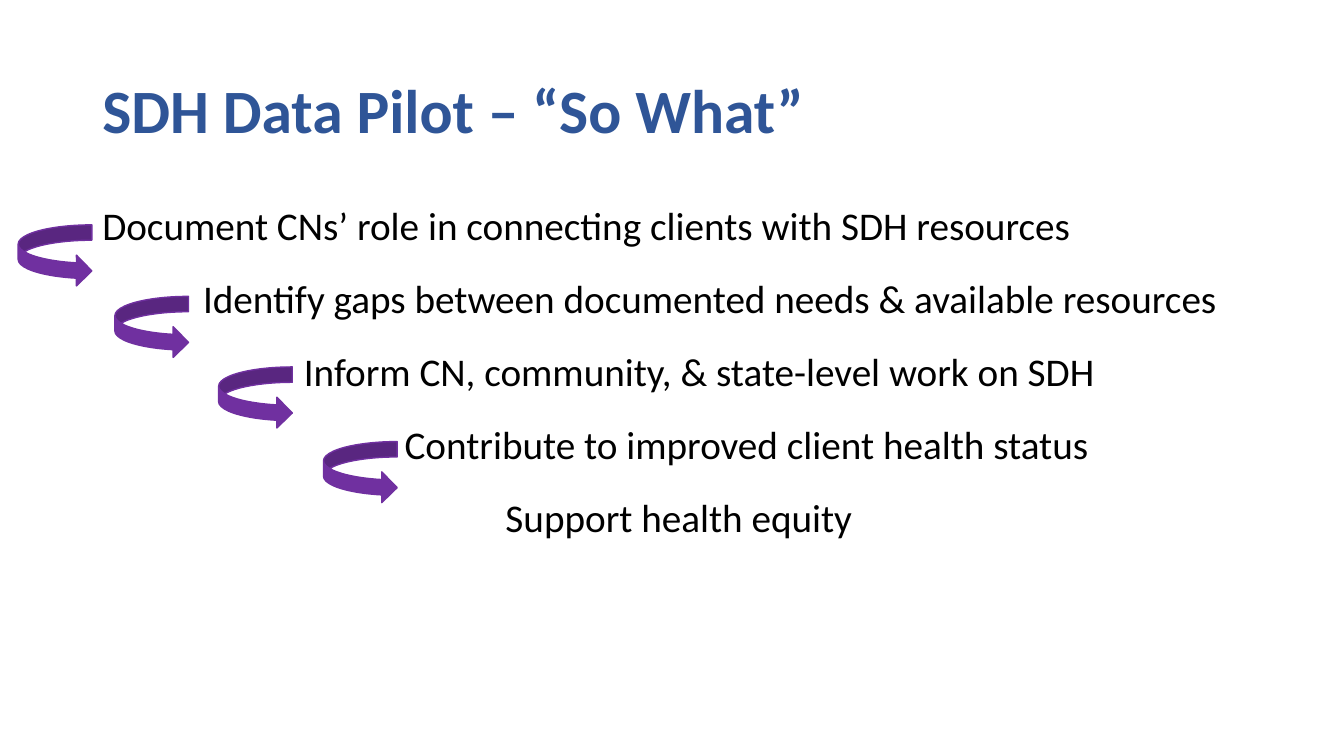
import pptx
import pptx.util
import pptx.dml.color
import pptx.enum.shapes
import pptx.enum.text

Pt = pptx.util.Pt
RGB = pptx.dml.color.RGBColor.from_string

TITLE = "SDH Data Pilot – “So What”"
STEPS = [
    "Document CNs’ role in connecting clients with SDH resources",
    "Identify gaps between documented needs & available resources",
    "Inform CN, community, & state-level work on SDH",
    "Contribute to improved client health status",
    "Support health equity",
]
ARROWS = [(13, 160.6), (82.1, 211.7), (156.2, 262.1), (231.1, 315.4)]
THEME = {
    "font": "Calibri",
    "title": "2F5597",
    "body": "000000",
    "arrow": "7030A0",
    "big": 44,
    "mid": 28,
}
INDENT = 72


def add_text(slide, box, lines, size, color, bold=False, anchor="TOP",
             before=0, after=0, indent=0):
    frame = slide.shapes.add_textbox(*map(Pt, box)).text_frame
    frame.word_wrap = True
    frame.vertical_anchor = getattr(pptx.enum.text.MSO_ANCHOR, anchor)
    for i, line in enumerate(lines):
        para = frame.add_paragraph() if i else frame.paragraphs[0]
        para.line_spacing = 0.9
        para.space_before = Pt(before)
        para.space_after = Pt(after)
        para._p.get_or_add_pPr().set("marL", str(Pt(i * indent)))
        run = para.add_run()
        run.text = line
        run.font.name = THEME["font"]
        run.font.size = Pt(size)
        run.font.bold = bold
        run.font.color.rgb = RGB(color)


def add_arrow(slide, left, top):
    kind = pptx.enum.shapes.MSO_SHAPE.CURVED_RIGHT_ARROW
    arrow = slide.shapes.add_shape(kind, Pt(left), Pt(top), Pt(52.6), Pt(43.9))
    arrow.shadow.inherit = False
    arrow.fill.solid()
    arrow.fill.fore_color.rgb = RGB(THEME["arrow"])
    arrow.line.color.rgb = RGB(THEME["arrow"])
    arrow.line.width = Pt(1)


def main():
    deck = pptx.Presentation()
    deck.slide_width, deck.slide_height = Pt(960), Pt(540)
    slide = deck.slides.add_slide(deck.slide_layouts[6])
    add_text(slide, (66, 28.75, 828, 104.4), [TITLE], THEME["big"],
             THEME["title"], bold=True, anchor="MIDDLE")
    add_text(slide, (66, 143.75, 894, 342.7), STEPS, THEME["mid"],
             THEME["body"], before=10, after=12, indent=INDENT)
    for left, top in ARROWS:
        add_arrow(slide, left, top)
    deck.save("out.pptx")


if __name__ == "__main__":
    main()
